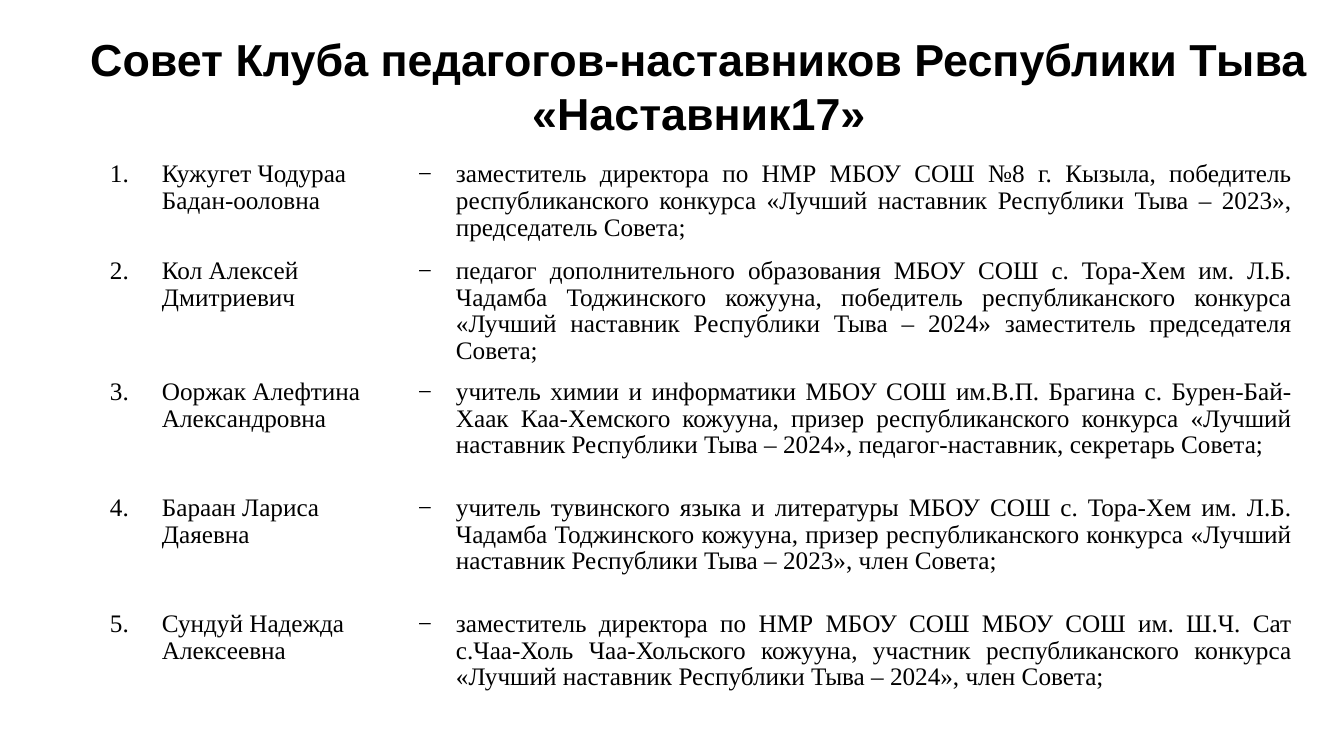
from lxml.etree import SubElement
from pptx import Presentation
from pptx.dml.color import RGBColor
from pptx.enum.text import MSO_ANCHOR, MSO_AUTO_SIZE, PP_ALIGN
from pptx.oxml.ns import qn
from pptx.util import Pt

BLACK = RGBColor(0x00, 0x00, 0x00)
EMU_PER_PX = 914400 / 100.8


def px(length):
    return round(length * EMU_PER_PX)


class CouncilSlide:
    title_font = "Arial"
    list_font = "Times New Roman"
    title_size = Pt(32)
    list_size = Pt(18)
    line_spacing = 0.96
    cell_inset = 7
    dash_indent = 38

    def __init__(self, presentation):
        self.slide = presentation.slides.add_slide(presentation.slide_layouts[5])

    def style(self, paragraph, font, size, bold, align):
        paragraph.alignment = align
        paragraph.font.name = font
        paragraph.font.size = size
        paragraph.font.bold = bold
        paragraph.font.color.rgb = BLACK

    def title(self, lines, left, top, width, height):
        heading = self.slide.shapes.title
        heading.left, heading.top = px(left), px(top)
        heading.width, heading.height = px(width), px(height)
        frame = heading.text_frame
        frame.text = "\n".join(lines)
        frame.word_wrap = True
        frame.auto_size = MSO_AUTO_SIZE.NONE
        frame.vertical_anchor = MSO_ANCHOR.MIDDLE
        for paragraph in frame.paragraphs:
            self.style(paragraph, self.title_font, self.title_size, True, PP_ALIGN.CENTER)

    def dash(self, paragraph):
        properties = paragraph._p.get_or_add_pPr()
        properties.set("marL", str(px(self.dash_indent)))
        properties.set("indent", str(-px(self.dash_indent)))
        SubElement(properties, qn("a:buFont"), typeface=self.list_font)
        SubElement(properties, qn("a:buChar"), char="−")

    def cell(self, cell, text, dashed):
        cell.fill.background()
        cell.margin_left = cell.margin_right = px(self.cell_inset)
        cell.margin_top = cell.margin_bottom = 0
        cell.vertical_anchor = MSO_ANCHOR.TOP
        cell.text = text
        paragraph = cell.text_frame.paragraphs[0]
        paragraph.line_spacing = self.line_spacing
        if dashed:
            self.dash(paragraph)
        align = PP_ALIGN.JUSTIFY if dashed else PP_ALIGN.LEFT
        self.style(paragraph, self.list_font, self.list_size, False, align)

    def table(self, members, left, top, widths, heights):
        table = self.slide.shapes.add_table(
            len(heights), len(widths), px(left), px(top),
            px(sum(widths)), px(sum(heights))).table
        table.first_row = False
        table.horz_banding = False
        for column, width in zip(table.columns, widths):
            column.width = px(width)
        for row, height in zip(table.rows, heights):
            row.height = px(height)
        for index, (name, role) in enumerate(members):
            for column, text in enumerate((f"{index + 1}.", name, role)):
                self.cell(table.cell(index, column), text, dashed=column == 2)


TITLE = ["Совет Клуба педагогов-наставников Республики Тыва", "«Наставник17»"]

MEMBERS = [
    ("Кужугет Чодураа Бадан-ооловна",
     "заместитель директора по НМР МБОУ СОШ №8 г. Кызыла, победитель "
     "республиканского конкурса «Лучший наставник Республики Тыва – 2023», "
     "председатель Совета;"),
    ("Кол Алексей Дмитриевич",
     "педагог дополнительного образования МБОУ СОШ с. Тора-Хем им. Л.Б. "
     "Чадамба Тоджинского кожууна, победитель республиканского конкурса "
     "«Лучший наставник Республики Тыва – 2024» заместитель председателя "
     "Совета;"),
    ("Ооржак Алефтина Александровна",
     "учитель химии и информатики МБОУ СОШ им.В.П. Брагина с. Бурен-Бай-Хаак "
     "Каа-Хемского кожууна, призер республиканского конкурса «Лучший "
     "наставник Республики Тыва – 2024», педагог-наставник, секретарь Совета;"),
    ("Бараан Лариса Даяевна",
     "учитель тувинского языка и литературы МБОУ СОШ с. Тора-Хем им. Л.Б. "
     "Чадамба Тоджинского кожууна, призер республиканского конкурса «Лучший "
     "наставник Республики Тыва – 2023», член Совета;"),
    ("Сундуй Надежда Алексеевна",
     "заместитель директора по НМР МБОУ СОШ МБОУ СОШ им. Ш.Ч. Сат "
     "с.Чаа-Холь Чаа-Хольского кожууна, участник республиканского конкурса "
     "«Лучший наставник Республики Тыва – 2024», член Совета;"),
]


def main():
    presentation = Presentation()
    presentation.slide_width = px(1344)
    presentation.slide_height = px(756)
    council = CouncilSlide(presentation)
    council.title(TITLE, 54, 26, 1290, 119)
    council.table(MEMBERS, 103, 161, [52, 256, 888], [97, 121, 116, 116, 116])
    presentation.save("out.pptx")


if __name__ == "__main__":
    main()
